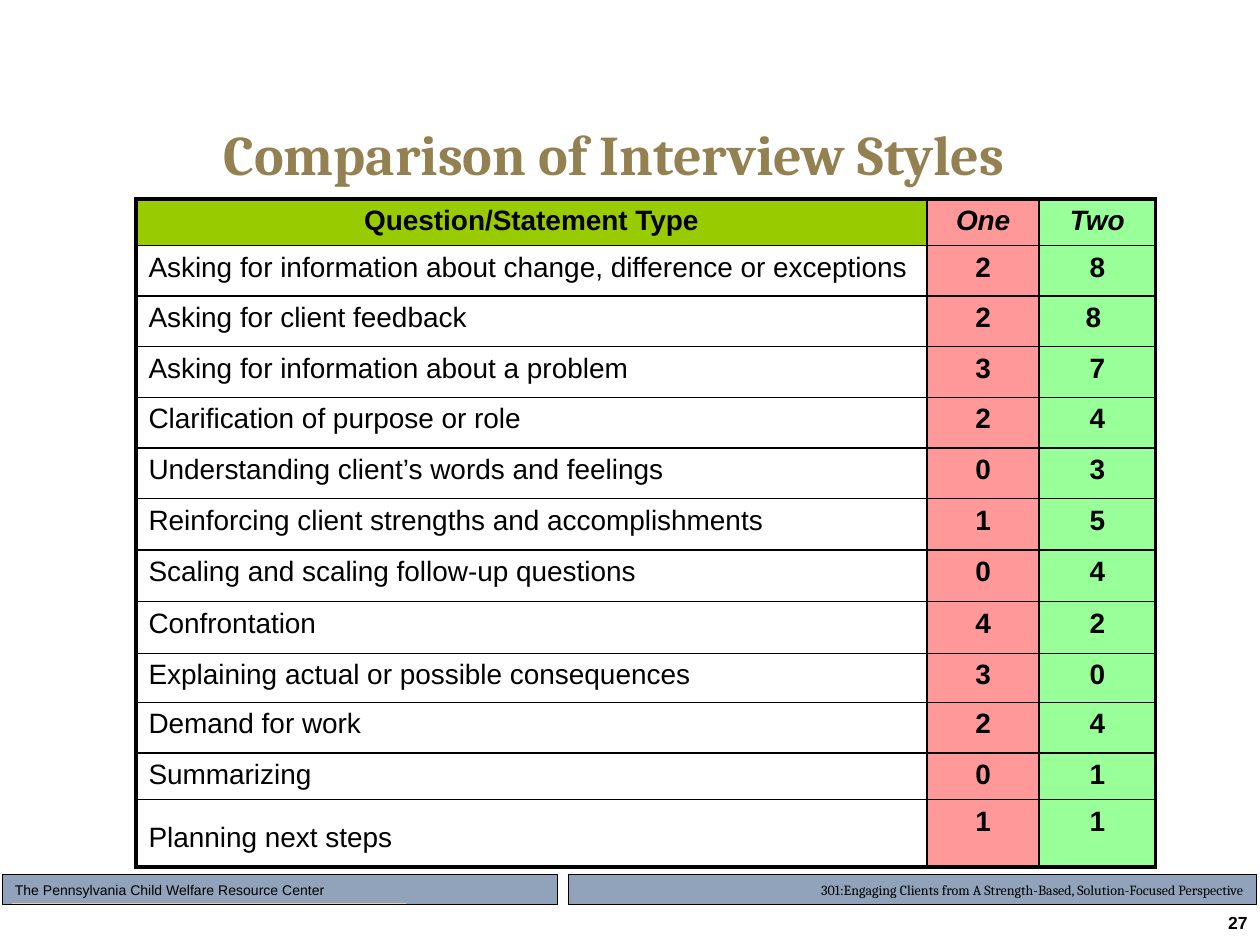
"""Build the slide that compares two interview styles."""
from dataclasses import dataclass

from lxml import etree
from pptx import Presentation
from pptx.dml.color import RGBColor
from pptx.enum.shapes import MSO_CONNECTOR, MSO_SHAPE
from pptx.enum.text import MSO_ANCHOR, PP_ALIGN
from pptx.oxml.ns import qn
from pptx.util import Cm, Pt

LEFT, MID, RIGHT = PP_ALIGN.LEFT, PP_ALIGN.CENTER, PP_ALIGN.RIGHT
CENTRE, TOP = MSO_ANCHOR.MIDDLE, MSO_ANCHOR.TOP
RECT, LINE = MSO_SHAPE.RECTANGLE, MSO_CONNECTOR.STRAIGHT
BLACK, STEEL, GOLD, SAND = "000000", "91A3BB", "948151", "E5D199"
LIME, PINK, MINT = "99CC00", "FF9999", "99FF99"
THICK, THIN = 2.25, 1
COLS = (15.95, 2.26, 2.34)


@dataclass(frozen=True)
class Label:
    text: str
    box: tuple[float, float, float, float]
    size: float
    font: str
    align: PP_ALIGN
    tint: str = BLACK
    bold: bool = False
    edge: float = 0


@dataclass(frozen=True)
class Row:
    text: str
    one: str
    two: str
    high: float = 1.02


BARS = (
    Label("301:Engaging Clients from A Strength-Based, Solution-Focused Perspective",
          (11.46, 17.63, 13.87, 0.61), 8, "Cambria", RIGHT, edge=0.75),
    Label("The Pennsylvania Child Welfare Resource Center",
          (0.05, 17.63, 11.18, 0.61), 8, "Arial", LEFT, edge=0.5),
)
TEXTS = (
    Label("27", (21.59, 18.26, 3.81, 0.66), 10, "Arial", RIGHT, bold=True),
    Label("Comparison of Interview Styles", (2.54, 2.11, 19.69, 1.96),
          32, "Cambria", MID, GOLD, True),
)
ROWS = (
    Row("Question/Statement Type", "One", "Two", 0.94),
    Row("Asking for information about change, difference or exceptions", "2", "8"),
    Row("Asking for client feedback", "2", "8 "),
    Row("Asking for information about a problem", "3", "7"),
    Row("Clarification of purpose or role", "2", "4"),
    Row("Understanding client’s words and feelings", "0", "3"),
    Row("Reinforcing client strengths and accomplishments", "1", "5", 1.04),
    Row("Scaling and scaling follow-up questions", "0", "4", 1.04),
    Row("Confrontation", "4", "2", 1.04),
    Row("Explaining actual or possible consequences", "3", "0", 0.99),
    Row("Demand for work", "2", "4"),
    Row("Summarizing", "0", "1", 0.94),
    Row("Planning next steps", "1", "1", 1.35),
)


def paint(code: str) -> RGBColor:
    """Turn a hex string into a colour."""
    return RGBColor.from_string(code)


def write(para, text: str, tint: str, form: dict) -> None:
    """Add a run with the given font values."""
    run = para.add_run()
    run.text = text
    for key, value in form.items():
        setattr(run.font, key, value)
    run.font.color.rgb = paint(tint)


def fill_text(shape, label: Label) -> None:
    """Put the label's words in a shape."""
    frame = shape.text_frame
    frame.word_wrap = True
    frame.vertical_anchor = CENTRE
    para = frame.paragraphs[0]
    para.alignment = label.align
    write(para, label.text, label.tint,
          {"name": label.font, "size": Pt(label.size), "bold": label.bold})


def add_bar(shapes, label: Label) -> None:
    """Draw a footer bar."""
    bar = shapes.add_shape(RECT, *map(Cm, label.box))
    bar.shadow.inherit = False
    bar.fill.solid()
    bar.fill.fore_color.rgb = paint(STEEL)
    bar.line.color.rgb = paint(BLACK)
    bar.line.width = Pt(label.edge)
    fill_text(bar, label)


def add_rule(shapes) -> None:
    """Draw the pale line under the left bar."""
    rule = shapes.add_connector(LINE, Cm(0.25), Cm(18.21), Cm(8.18), Cm(18.21))
    rule.line.color.rgb = paint(SAND)
    rule.line.width = Pt(0.75)
    etree.SubElement(rule._element.spPr, qn("a:effectLst"))


def set_edge(cell, sides: dict[str, float]) -> None:
    """Give a cell its border lines."""
    props = cell._tc.get_or_add_tcPr()
    for place, (side, width) in enumerate(sides.items()):
        line = etree.Element(qn(f"a:ln{side}"), w=str(Pt(width)))
        solid = etree.SubElement(line, qn("a:solidFill"))
        etree.SubElement(solid, qn("a:srgbClr"), val=BLACK)
        props.insert(place, line)


def fill_cell(cell, text: str, row: int, col: int) -> None:
    """Style one cell by its place in the grid."""
    head, last = row == 0, row == len(ROWS) - 1
    tint = (LIME if head else None, PINK, MINT)[col]
    if tint:
        cell.fill.solid()
        cell.fill.fore_color.rgb = paint(tint)
    else:
        cell.fill.background()
    cell.vertical_anchor = TOP
    para = cell.text_frame.paragraphs[0]
    para.alignment = MID if head or col else LEFT
    form = {"name": "Arial", "size": Pt(16), "bold": head or col > 0,
            "italic": head and col > 0}
    write(para, text, BLACK, form)
    if last and col == 0:
        write(para, " ", BLACK, form | {"size": Pt(26)})
    set_edge(cell, {
        "L": THICK if col == 0 else THIN,
        "R": THICK if col == len(COLS) - 1 else THIN,
        "T": THICK if head else THIN,
        "B": THICK if last else THIN,
    })


def add_grid(shapes) -> None:
    """Draw the table of counts."""
    high = sum(row.high for row in ROWS)
    grid = shapes.add_table(len(ROWS), len(COLS), Cm(2.74), Cm(4.01),
                            Cm(sum(COLS)), Cm(high)).table
    grid.first_row = grid.horz_banding = False
    for col, wide in enumerate(COLS):
        grid.columns[col].width = Cm(wide)
    for place, row in enumerate(ROWS):
        grid.rows[place].height = Cm(row.high)
        for col, text in enumerate((row.text, row.one, row.two)):
            fill_cell(grid.cell(place, col), text, place, col)


def main() -> None:
    """Build and save the slide."""
    deck = Presentation()
    deck.slide_width, deck.slide_height = Cm(25.4), Cm(19.05)
    shapes = deck.slides.add_slide(deck.slide_layouts[6]).shapes
    for label in BARS:
        add_bar(shapes, label)
    add_rule(shapes)
    for label in TEXTS:
        fill_text(shapes.add_textbox(*map(Cm, label.box)), label)
    add_grid(shapes)
    deck.save("out.pptx")


if __name__ == "__main__":
    main()
